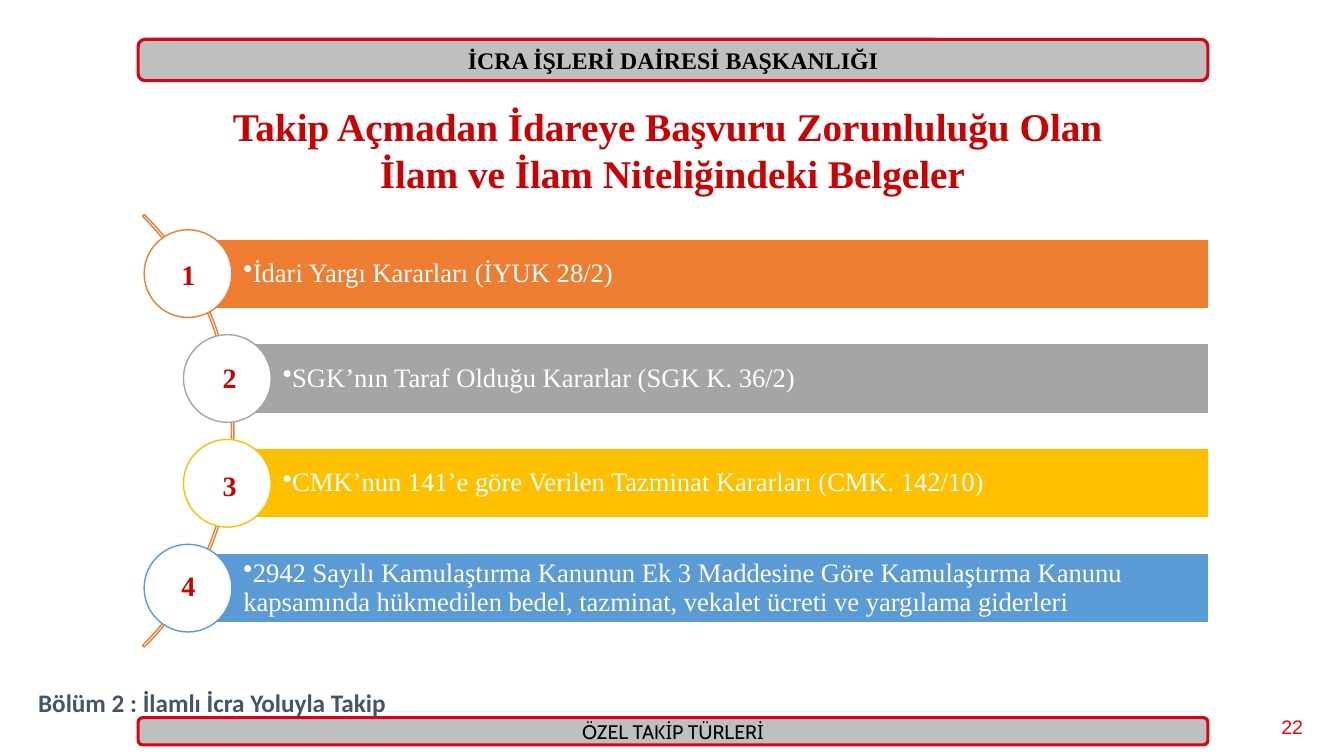
"""Build the slide on rulings that require applying to the administration first."""
import dataclasses
import typing

import lxml.etree
import pptx
import pptx.dml.color
import pptx.enum.shapes
import pptx.enum.text
import pptx.oxml.ns
import pptx.util

Inches = pptx.util.Inches
Preset = pptx.enum.shapes.MSO_SHAPE
Align = pptx.enum.text.PP_ALIGN
Anchor = pptx.enum.text.MSO_ANCHOR
AutoSize = pptx.enum.text.MSO_AUTO_SIZE

COLORS = {
    "white": "FFFFFF", "black": "000000", "band": "BFBFBF", "border": "D70317",
    "crimson": "CC0000", "page": "FF0000", "section": "44546A",
    "orange": "ED7D31", "gray": "A5A5A5", "gold": "FFC000", "blue": "5B9BD5",
}
SERIF = "Times New Roman"
ROW_TOP, ROW_PITCH = 2.28, 1.04
CIRCLE_SIZE = 0.87
BAR_HEIGHT, BAR_RIGHT = 0.69, 11.99


@dataclasses.dataclass(frozen=True)
class Box:
    """Position and size in inches."""
    left: float
    top: float
    width: float
    height: float

    def emu(self) -> tuple:
        """Return the four lengths for python-pptx."""
        return tuple(Inches(length) for length in dataclasses.astuple(self))


@dataclasses.dataclass(frozen=True)
class TextStyle:
    """Font and alignment of a text."""
    size: float
    font: str
    color: str
    bold: bool = False
    align: typing.Optional[Align] = None


@dataclasses.dataclass(frozen=True)
class Ruling:
    """One numbered row of the list."""
    text: str
    color: str
    circle_left: float
    number_left: float
    number_top: float


@dataclasses.dataclass(frozen=True)
class Band:
    """Header or footer band."""
    text: str
    box: Box
    style: TextStyle


@dataclasses.dataclass(frozen=True)
class Label:
    """Free-standing text."""
    lines: tuple
    box: Box
    style: TextStyle
    wrap: bool = True
    auto_size: AutoSize = AutoSize.SHAPE_TO_FIT_TEXT


BANDS = (
    Band("İCRA İŞLERİ DAİRESİ BAŞKANLIĞI", Box(1.37, 0.39, 10.61, 0.41),
         TextStyle(17, SERIF, "black", True, Align.CENTER)),
    Band("ÖZEL TAKİP TÜRLERİ", Box(1.37, 7.12, 10.61, 0.27),
         TextStyle(14, "Cabin", "black", False, Align.CENTER)),
)
RULINGS = (
    Ruling("İdari Yargı Kararları (İYUK 28/2)", "orange", 1.43, 1.7, 2.51),
    Ruling("SGK’nın Taraf Olduğu Kararlar (SGK K. 36/2)", "gray", 1.82, 2.11, 3.53),
    Ruling("CMK’nun 141’e göre Verilen Tazminat Kararları (CMK. 142/10)",
           "gold", 1.82, 2.11, 4.6),
    Ruling("2942 Sayılı Kamulaştırma Kanunun Ek 3 Maddesine Göre Kamulaştırma Kanunu "
           "kapsamında hükmedilen bedel, tazminat, vekalet ücreti ve yargılama giderleri",
           "blue", 1.43, 1.7, 5.59),
)
LABELS = (
    Label(("22",), Box(12.61, 7.04, 0.45, 0.27), TextStyle(14, "Arial", "page"),
          auto_size=AutoSize.NONE),
    Label(("Bölüm 2 : İlamlı İcra Yoluyla Takip",), Box(0.28, 6.77, 3.82, 0.4),
          TextStyle(18, "Calibri", "section", True)),
    Label(("Takip Açmadan İdareye Başvuru Zorunluluğu Olan ",
           "İlam ve İlam Niteliğindeki Belgeler"), Box(1.35, 0.97, 10.64, 1.04),
          TextStyle(28, SERIF, "crimson", True, Align.CENTER)),
)
RULING_STYLE = TextStyle(19, SERIF, "white", align=Align.LEFT)
NUMBER_STYLE = TextStyle(20, SERIF, "crimson", True)


def rgb(color: str) -> pptx.dml.color.RGBColor:
    """Look up a named colour."""
    return pptx.dml.color.RGBColor.from_string(COLORS[color])


def apply(target: typing.Any, values: dict) -> None:
    """Set each named format value on the target."""
    for name, value in values.items():
        setattr(target, name, value)


def write(paragraph: typing.Any, text: str, style: TextStyle) -> None:
    """Fill a paragraph with styled text."""
    run = paragraph.add_run()
    run.text = text
    paragraph.alignment = style.align
    apply(run.font, {"size": pptx.util.Pt(style.size), "name": style.font,
                     "bold": style.bold})
    run.font.color.rgb = rgb(style.color)


def draw_shape(slide: typing.Any, preset: Preset, box: Box, fill: str,
               line: str, line_width: float = 1) -> typing.Any:
    """Draw a filled and outlined preset shape."""
    shape = slide.shapes.add_shape(preset, *box.emu())
    shape.shadow.inherit = False
    shape.fill.solid()
    shape.fill.fore_color.rgb = rgb(fill)
    shape.line.color.rgb = rgb(line)
    shape.line.width = pptx.util.Pt(line_width)
    return shape


def draw_band(slide: typing.Any, band: Band) -> None:
    """Draw a header or footer band."""
    shape = draw_shape(slide, Preset.ROUNDED_RECTANGLE, band.box, "band", "border", 2.25)
    shape.text_frame.vertical_anchor = Anchor.MIDDLE
    write(shape.text_frame.paragraphs[0], band.text, band.style)


def draw_label(slide: typing.Any, label: Label) -> None:
    """Draw free-standing text, one paragraph a line."""
    frame = slide.shapes.add_textbox(*label.box.emu()).text_frame
    apply(frame, {"word_wrap": label.wrap, "auto_size": label.auto_size})
    for index, line in enumerate(label.lines):
        paragraph = frame.add_paragraph() if index else frame.paragraphs[0]
        write(paragraph, line, label.style)


def draw_arc(slide: typing.Any) -> None:
    """Draw the thin arc that links the circles."""
    arc = draw_shape(slide, Preset.BLOCK_ARC, Box(-3.75, 1.24, 6.07, 6.07),
                     "white", "orange")
    arc.fill.background()
    for index, value in enumerate((189, 27, 0.004)):
        arc.adjustments[index] = value


def draw_ruling(slide: typing.Any, index: int, ruling: Ruling) -> None:
    """Draw the bar and circle of one row."""
    top = ROW_TOP + index * ROW_PITCH
    bar_left = ruling.circle_left + CIRCLE_SIZE / 2
    bar_top = top + (CIRCLE_SIZE - BAR_HEIGHT) / 2
    bar = draw_shape(slide, Preset.RECTANGLE,
                     Box(bar_left, bar_top, BAR_RIGHT - bar_left, BAR_HEIGHT),
                     ruling.color, "white")
    apply(bar.text_frame, {
        "vertical_anchor": Anchor.MIDDLE, "word_wrap": True,
        "margin_left": Inches(0.55), "margin_right": Inches(0.05),
        "margin_top": Inches(0.05), "margin_bottom": Inches(0.05)})
    paragraph = bar.text_frame.paragraphs[0]
    properties = paragraph._p.get_or_add_pPr()
    lxml.etree.SubElement(properties, pptx.oxml.ns.qn("a:buChar")).set("char", "•")
    paragraph.line_spacing = 0.9
    write(paragraph, ruling.text, RULING_STYLE)
    draw_shape(slide, Preset.OVAL, Box(ruling.circle_left, top, CIRCLE_SIZE, CIRCLE_SIZE),
               "white", ruling.color)


def main() -> None:
    """Assemble and save the slide."""
    deck = pptx.Presentation()
    apply(deck, {"slide_width": Inches(13.33), "slide_height": Inches(7.5)})
    slide = deck.slides.add_slide(deck.slide_layouts[6])
    for band in BANDS:
        draw_band(slide, band)
    draw_arc(slide)
    for index, ruling in enumerate(RULINGS):
        draw_ruling(slide, index, ruling)
    numbers = [Label((str(number),), Box(ruling.number_left, ruling.number_top, 0.34, 0.44),
                     NUMBER_STYLE, wrap=False)
               for number, ruling in enumerate(RULINGS, 1)]
    for label in (*LABELS, *numbers):
        draw_label(slide, label)
    deck.save("out.pptx")


if __name__ == "__main__":
    main()
